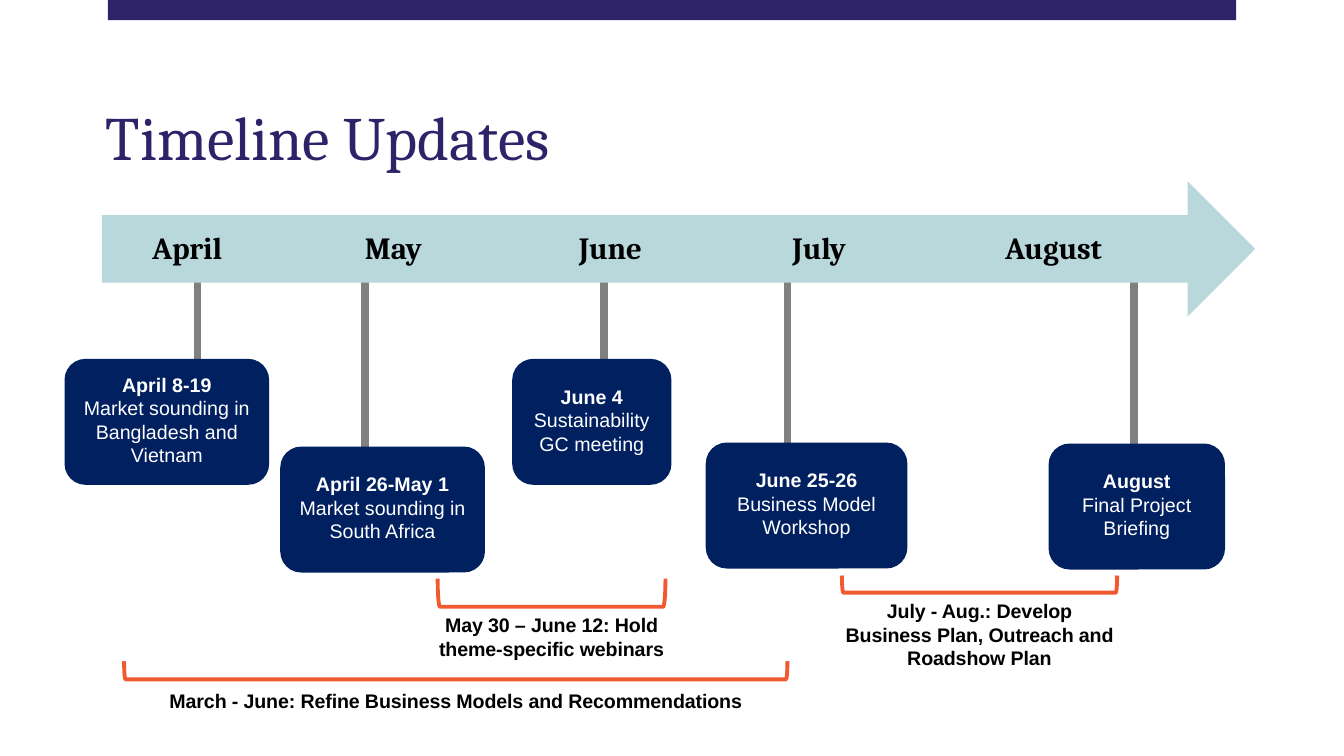
from dataclasses import dataclass

from lxml import etree
from pptx import Presentation
from pptx import util as u
from pptx.dml.color import RGBColor
from pptx.enum import shapes, text
from pptx.oxml import ns

PX = 9144  # EMU in one px, at 100 px to the inch


@dataclass(frozen=True)
class Theme:
    purple: str = "2E2268"
    arrow: str = "B9D8DC"
    card: str = "002060"
    stem: str = "808080"
    bracket: str = "F15A30"
    light: str = "FFFFFF"
    dark: str = "000000"
    heading_font: str = "Cambria"
    body_font: str = "Arial"
    title_size: int = 44
    month_size: int = 22
    body_size: int = 14
    stem_width: float = 5.5
    bracket_width: float = 2.75
    tracking: int = -10  # hundredths of a point


@dataclass(frozen=True)
class Box:
    left: int
    top: int
    width: int
    height: int

    def emu(self) -> list[int]:
        return [side * PX for side in (self.left, self.top, self.width, self.height)]


@dataclass(frozen=True)
class Milestone:
    date: str
    event: str
    box: Box
    stem_x: int


@dataclass(frozen=True)
class Phase:
    label: str
    bracket: Box
    label_top: int
    label_height: int


THEME = Theme()
TOP_BAR = Box(107, -2, 1119, 22)
TITLE = Box(95, 40, 1150, 137)
ARROW = Box(101, 180, 1144, 134)
STEM_TOP = 270
CARD_HEIGHT = 125
MONTHS = ["April", "May", "June", "July", "August"]
MONTH_LEFT, MONTH_STEP = 151, 211.5

MILESTONES = [
    Milestone("April 8-19", "Market sounding in Bangladesh and Vietnam",
              Box(64, 356, 203, CARD_HEIGHT), 196),
    Milestone("April 26-May 1", "Market sounding in South Africa",
              Box(278, 443, 203, CARD_HEIGHT), 362),
    Milestone("June 4", "Sustainability GC meeting",
              Box(508, 356, 158, CARD_HEIGHT), 599),
    Milestone("June 25-26", "Business Model Workshop",
              Box(700, 439, 200, CARD_HEIGHT), 781),
    Milestone("August", "Final Project Briefing",
              Box(1040, 440, 175, CARD_HEIGHT), 1125),
]
PHASES = [
    Phase("March - June: Refine Business Models and Recommendations",
          Box(123, 656, 658, 18), 683, 24),
    Phase("July - Aug.: Develop Business Plan, Outreach and Roadshow Plan",
          Box(835, 571, 273, 17), 594, 71),
    Phase("May 30 – June 12: Hold theme-specific webinars",
          Box(434, 574, 226, 28), 608, 47),
]


def apply_format(target, **values) -> None:
    for name, value in values.items():
        setattr(target, name, value)


def set_font(font, name: str, size: int, color: str, bold: bool = False) -> None:
    apply_format(font, name=name, size=u.Pt(size), bold=bold)
    font.color.rgb = RGBColor.from_string(color)


def set_frame(frame, anchor, left: int = 0, top: int = 0, right: int = 0, bottom: int = 0) -> None:
    apply_format(frame, word_wrap=True, vertical_anchor=anchor,
                 margin_left=left * PX, margin_top=top * PX,
                 margin_right=right * PX, margin_bottom=bottom * PX)


def add_filled_shape(slide, kind, box: Box, color: str):
    shape = slide.shapes.add_shape(kind, *box.emu())
    shape.shadow.inherit = False
    shape.fill.solid()
    shape.fill.fore_color.rgb = RGBColor.from_string(color)
    shape.line.fill.background()
    return shape


def add_title(slide, words: str) -> None:
    title = slide.shapes.title
    left, top, width, height = TITLE.emu()
    apply_format(title, left=left, top=top, width=width, height=height)
    set_frame(title.text_frame, text.MSO_ANCHOR.BOTTOM, 10, 5, 10, 5)
    paragraph = title.text_frame.paragraphs[0]
    apply_format(paragraph, alignment=text.PP_ALIGN.LEFT, line_spacing=0.9)
    run = paragraph.add_run()
    run.text = words
    set_font(run.font, THEME.heading_font, THEME.title_size, THEME.purple)


def add_label(slide, words: str, box: Box, font: str, size: int, alignment) -> None:
    """Add bold, slightly tightened text without margins."""
    frame = slide.shapes.add_textbox(*box.emu()).text_frame
    set_frame(frame, text.MSO_ANCHOR.MIDDLE)
    paragraph = frame.paragraphs[0]
    paragraph.alignment = alignment
    run = paragraph.add_run()
    run.text = words
    set_font(run.font, font, size, THEME.dark, bold=True)
    run._r.get_or_add_rPr().set("spc", str(THEME.tracking))


def add_stem(slide, milestone: Milestone) -> None:
    x = milestone.stem_x * PX
    stem = slide.shapes.add_connector(shapes.MSO_CONNECTOR.STRAIGHT, x, STEM_TOP * PX,
                                      x, (milestone.box.top + 10) * PX)
    stem.line.width = u.Pt(THEME.stem_width)
    stem.line.color.rgb = RGBColor.from_string(THEME.stem)
    etree.SubElement(stem._element.spPr, ns.qn("a:effectLst"))


def add_card(slide, milestone: Milestone) -> None:
    card = add_filled_shape(slide, shapes.MSO_SHAPE.ROUNDED_RECTANGLE,
                            milestone.box, THEME.card)
    frame = card.text_frame
    set_frame(frame, text.MSO_ANCHOR.MIDDLE, 10, 10, 10, 14)
    lines = [(frame.paragraphs[0], milestone.date, True),
             (frame.add_paragraph(), milestone.event, False)]
    for paragraph, words, bold in lines:
        paragraph.alignment = text.PP_ALIGN.CENTER
        run = paragraph.add_run()
        run.text = words
        set_font(run.font, THEME.body_font, THEME.body_size, THEME.light, bold)


def add_phase(slide, phase: Phase) -> None:
    """Add a bracket that opens upwards, with its label below."""
    span = phase.bracket
    shift = (span.width - span.height) / 2
    bracket = slide.shapes.add_shape(
        shapes.MSO_SHAPE.RIGHT_BRACKET,
        int((span.left + shift) * PX), int((span.top - shift) * PX),
        span.height * PX, span.width * PX)
    bracket.rotation = 90
    bracket.shadow.inherit = False
    bracket.fill.background()
    bracket.line.width = u.Pt(THEME.bracket_width)
    bracket.line.color.rgb = RGBColor.from_string(THEME.bracket)
    add_label(slide, phase.label,
              Box(span.left, phase.label_top, span.width, phase.label_height),
              THEME.body_font, THEME.body_size, text.PP_ALIGN.CENTER)


def main() -> None:
    presentation = Presentation()
    apply_format(presentation, slide_width=1333 * PX, slide_height=750 * PX)
    slide = presentation.slides.add_slide(presentation.slide_layouts.get_by_name("Title Only"))
    add_filled_shape(slide, shapes.MSO_SHAPE.RECTANGLE, TOP_BAR, THEME.purple)
    add_title(slide, "Timeline Updates")
    for milestone in MILESTONES:
        add_stem(slide, milestone)
    add_filled_shape(slide, shapes.MSO_SHAPE.RIGHT_ARROW, ARROW, THEME.arrow)
    for index, month in enumerate(MONTHS):
        add_label(slide, month, Box(round(MONTH_LEFT + index * MONTH_STEP), 227, 185, 37),
                  THEME.heading_font, THEME.month_size, text.PP_ALIGN.LEFT)
    for milestone in MILESTONES:
        add_card(slide, milestone)
    for phase in PHASES:
        add_phase(slide, phase)
    presentation.save("out.pptx")


if __name__ == "__main__":
    main()
